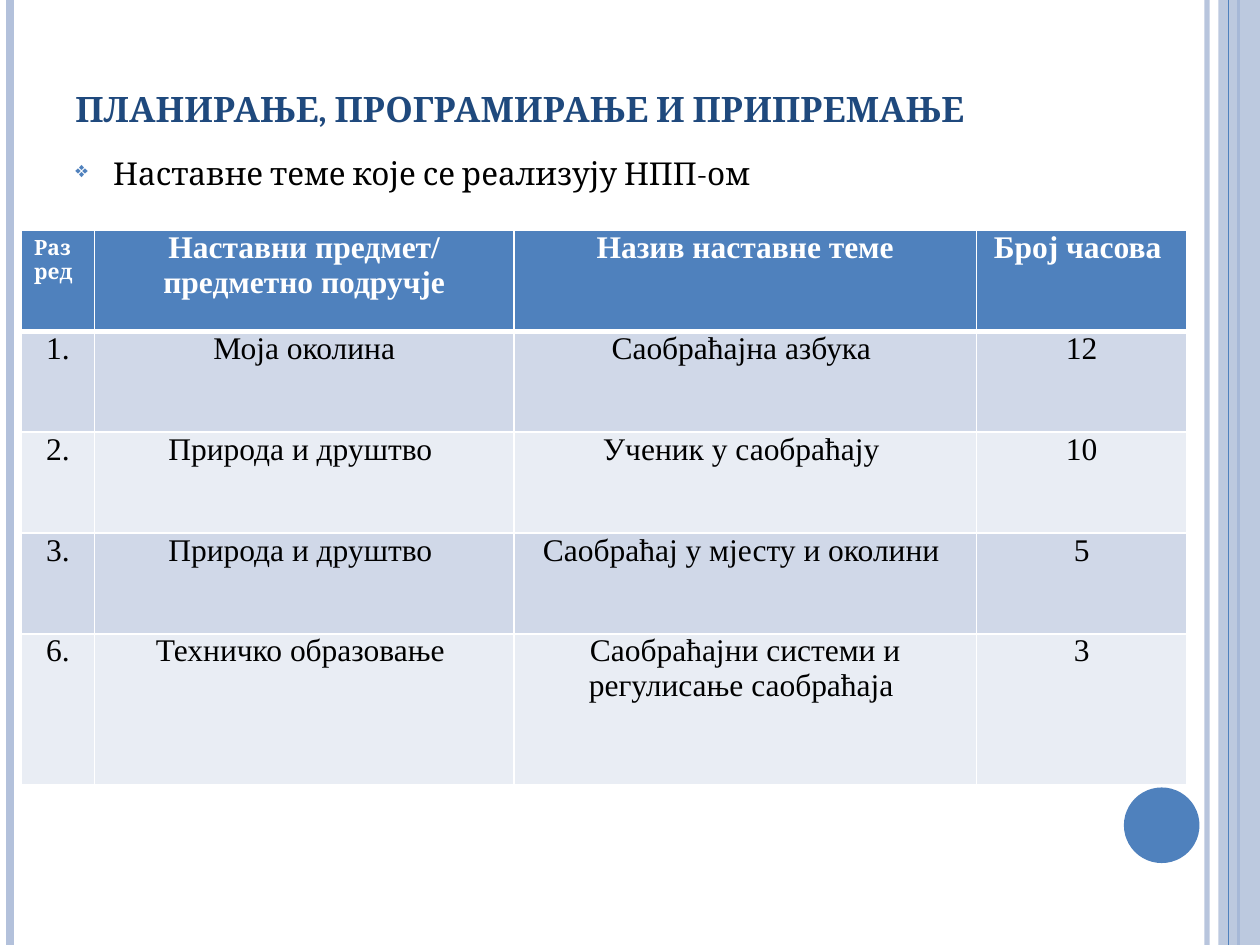
from lxml.etree import SubElement
from pptx import Presentation
from pptx.dml.color import RGBColor
from pptx.enum.shapes import MSO_CONNECTOR, MSO_SHAPE
from pptx.enum.text import MSO_ANCHOR, PP_ALIGN
from pptx.oxml.ns import qn
from pptx.util import Inches, Pt

BLUE, PALE_BLUE, NAVY = "4F81BD", "B3C1DB", "1F497D"
WHITE, BLACK = "FFFFFF", "000000"
BANDS = ["E9EDF4", "D0D8E8"]


def paint(color_format, color, alpha=100):
    """Set a hex colour, with an opacity in percent."""
    color_format.rgb = RGBColor.from_string(color)
    if alpha < 100:
        value = color_format._xFill.find(qn("a:srgbClr"))
        SubElement(value, qn("a:alpha"), val=str(alpha * 1000))


def add_span(paragraph, text, font, size, color, bold=False):
    span = paragraph.add_run()
    span.text = text
    span.font.name, span.font.size, span.font.bold = font, Pt(size), bold
    paint(span.font.color, color)


deck = Presentation()
deck.slide_width, deck.slide_height = Inches(10), Inches(7.5)
page = deck.slides.add_slide(deck.slide_layouts[6])

# Side stripes: x, width, colour, opacity; the band lies over the first three
stripes = [(9.58, 3, PALE_BLUE, 93), (0.08, 4.5, PALE_BLUE, 100),
           (9.83, 1.5, BLUE, 100), (9.75, 0.75, BLUE, 100)]
for number, (x, width, color, alpha) in enumerate(stripes):
    if number == 3:
        band = page.shapes.add_shape(MSO_SHAPE.RECTANGLE, Inches(9.67), 0,
                                     Inches(0.33), deck.slide_height)
        band.shadow.inherit = False
        band.fill.solid()
        paint(band.fill.fore_color, PALE_BLUE)
        SubElement(band._element.spPr.find(".//" + qn("a:srgbClr")),
                   qn("a:alpha"), val="87000")
        band.line.fill.background()
    stripe = page.shapes.add_connector(MSO_CONNECTOR.STRAIGHT, Inches(x), 0,
                                       Inches(x), deck.slide_height)
    stripe.line.width = Pt(width)
    paint(stripe.line.color, color)
    if alpha < 100:
        SubElement(stripe._element.spPr.find(".//" + qn("a:srgbClr")),
                   qn("a:alpha"), val=str(alpha * 1000))
    SubElement(stripe._element.spPr, qn("a:effectLst"))

disc = page.shapes.add_shape(MSO_SHAPE.OVAL, Inches(8.92), Inches(6.25),
                             Inches(0.6), Inches(0.6))
disc.shadow.inherit = False
disc.fill.solid()
paint(disc.fill.fore_color, BLUE)
disc.line.fill.background()

title = page.shapes.add_textbox(Inches(0.5), Inches(0.3), Inches(8.17), Inches(0.78))
title.text_frame.word_wrap = True
title.text_frame.vertical_anchor = MSO_ANCHOR.BOTTOM
add_span(title.text_frame.paragraphs[0], "ПЛАНИРАЊЕ, ПРОГРАМИРАЊЕ И ПРИПРЕМАЊЕ",
         "Cambria", 20, NAVY, True)

body = page.shapes.add_textbox(Inches(0.5), Inches(1.17), Inches(8.17), Inches(5.91))
body.text_frame.word_wrap = True
topic = body.text_frame.paragraphs[0]
properties = topic._p.get_or_add_pPr()
properties.set("marL", str(Inches(0.3)))
properties.set("indent", str(-Inches(0.3)))
SubElement(SubElement(properties, qn("a:buClr")), qn("a:srgbClr"), val=BLUE)
SubElement(properties, qn("a:buSzPct"), val="70000")
SubElement(properties, qn("a:buChar"), char="❖")
add_span(topic, "Наставне теме које се реализују НПП-ом", "Cambria", 18, BLACK)

rows = [
    ["Разред", "Наставни предмет/\nпредметно подручје", "Назив наставне теме", "Број часова "],
    ["1.", "Моја околина", "Саобраћајна азбука ", "12"],
    ["2.", "Природа и друштво ", "Ученик у саобраћају ", "10"],
    ["3.", "Природа и друштво ", "Саобраћај у мјесту и околини ", "5"],
    ["6.", "Техничко образовање ", "Саобраћајни системи и регулисање саобраћаја ", "3"],
]
table = page.shapes.add_table(len(rows), 4, Inches(0.17), Inches(1.83),
                              Inches(9.25), Inches(4.4)).table
for column, width in zip(table.columns, [0.58, 3.33, 3.67, 1.67]):
    column.width = Inches(width)
for row, height in zip(table.rows, [0.8, 0.8, 0.8, 0.8, 1.2]):
    row.height = Inches(height)

for r, texts in enumerate(rows):
    header = r == 0
    for c, text in enumerate(texts):
        cell = table.cell(r, c)
        grade_header = header and c == 0
        if not grade_header:
            cell.margin_left = cell.margin_right = Inches(0.07)
            cell.margin_top = cell.margin_bottom = 0
        for side in "LRTB":
            thick = (header and side == "B") or (r == 1 and side == "T")
            border = SubElement(cell._tc.get_or_add_tcPr(), qn("a:ln" + side),
                                w=str(Pt(3 if thick else 1)))
            SubElement(SubElement(border, qn("a:solidFill")), qn("a:srgbClr"), val=WHITE)
        cell.fill.solid()
        paint(cell.fill.fore_color, BLUE if header else BANDS[r % 2])
        for n, line in enumerate(text.split("\n")):
            frame = cell.text_frame
            paragraph = frame.add_paragraph() if n else frame.paragraphs[0]
            if grade_header:
                add_span(paragraph, line, "Cambria", 12, WHITE, True)
            else:
                paragraph.alignment = PP_ALIGN.CENTER
                add_span(paragraph, line, "Times New Roman", 18,
                         WHITE if header else BLACK, header)

deck.save("out.pptx")
